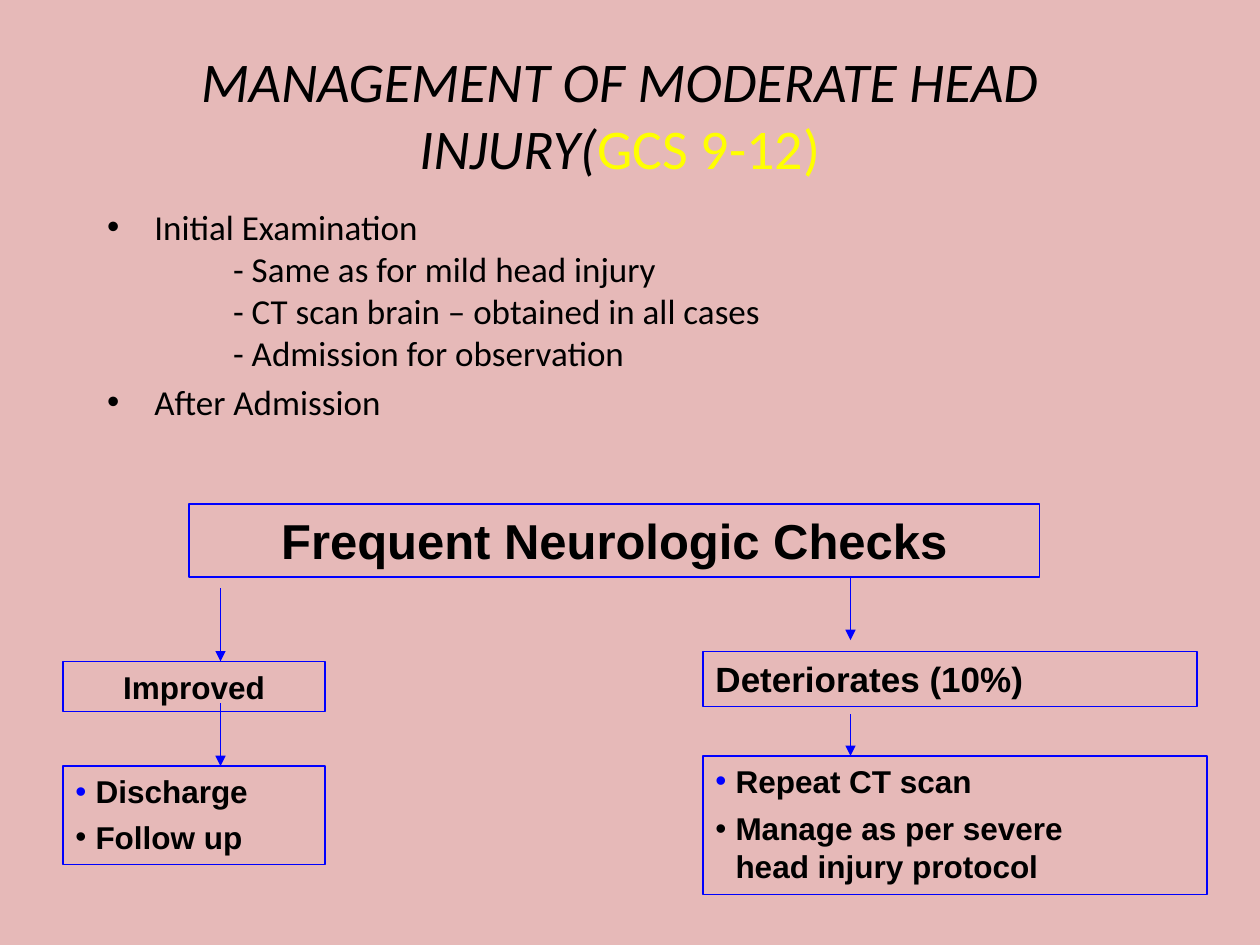
from dataclasses import dataclass

from lxml.etree import SubElement
from pptx import Presentation
from pptx.dml.color import RGBColor
from pptx.enum.shapes import MSO_CONNECTOR, MSO_SHAPE
from pptx.enum.text import MSO_ANCHOR, MSO_AUTO_SIZE, PP_ALIGN
from pptx.oxml.ns import qn
from pptx.util import Inches, Pt


@dataclass(frozen=True)
class Theme:
    back: str = "E6B9B8"
    ink: str = "000000"
    blue: str = "0000FF"
    gold: str = "FFFF00"
    head: str = "Calibri"
    chart: str = "Arial"
    title: int = 32
    body: int = 20
    large: int = 28
    label: int = 18
    rule: float = 0.75


THEME = Theme()


def paint(font, name, size, color=THEME.ink, bold=None, italic=None):
    font.name, font.size = name, Pt(size)
    font.bold, font.italic = bold, italic
    font.color.rgb = RGBColor.from_string(color)


def place(shape, left, top, width, height):
    shape.left, shape.top = Inches(left), Inches(top)
    shape.width, shape.height = Inches(width), Inches(height)


def stroke(line):
    line.color.rgb = RGBColor.from_string(THEME.blue)
    line.width = Pt(THEME.rule)


def add_title(slide):
    title = slide.shapes.title
    place(title, 0.67, -0.25, 8.5, 2.3)
    frame = title.text_frame
    frame.auto_size = MSO_AUTO_SIZE.NONE
    frame.vertical_anchor = MSO_ANCHOR.MIDDLE
    frame.text = "MANAGEMENT OF MODERATE HEAD INJURY("
    para = frame.paragraphs[0]
    para.alignment = PP_ALIGN.CENTER
    paint(para.runs[0].font, THEME.head, THEME.title, italic=True)
    score = para.add_run()
    score.text = "GCS 9-12)"
    paint(score.font, THEME.head, THEME.title, THEME.gold, italic=False)


def add_tab(para, stop):
    tabs = SubElement(para._p.get_or_add_pPr(), qn("a:tabLst"))
    SubElement(tabs, qn("a:tab"), pos=str(Inches(stop)), algn="l")


def add_body(slide):
    body = slide.placeholders[1]
    place(body, 0.75, 1.58, 8.5, 4.5)
    frame = body.text_frame
    frame.auto_size = MSO_AUTO_SIZE.NONE
    frame.text = (
        "Initial Examination\v\t- Same as for mild head injury"
        "\v\t- CT scan brain – obtained in all cases"
        "\v\t- Admission for observation\nAfter Admission"
    )
    for row, para in enumerate(frame.paragraphs):
        add_tab(para, 1)
        para.space_before = Pt(4 * row)
        for run in para.runs:
            paint(run.font, THEME.head, THEME.body)


def add_dot(para, color):
    props = para._p.get_or_add_pPr()
    hang = Inches(0.16)
    props.set("marL", str(hang))
    props.set("indent", str(-hang))
    tint = SubElement(props, qn("a:buClr"))
    SubElement(tint, qn("a:srgbClr"), val=color)
    SubElement(props, qn("a:buFont"), typeface=THEME.chart)
    SubElement(props, qn("a:buChar"), char="•")


def add_box(slide, area, text, size, align=PP_ALIGN.LEFT, gap=None):
    """Draw an outlined box; a gap in points makes its text a bullet list."""
    box = slide.shapes.add_shape(MSO_SHAPE.RECTANGLE, *map(Inches, area))
    box.shadow.inherit = False
    box.fill.background()
    stroke(box.line)
    frame = box.text_frame
    frame.word_wrap = True
    frame.vertical_anchor = MSO_ANCHOR.TOP
    frame.text = text
    for row, para in enumerate(frame.paragraphs):
        para.alignment = align
        if gap is not None:
            add_dot(para, THEME.ink if row else THEME.blue)
            para.space_before = Pt(gap * row)
        for run in para.runs:
            paint(run.font, THEME.chart, size, bold=True)


def add_arrow(slide, x, top, end):
    arrow = slide.shapes.add_connector(
        MSO_CONNECTOR.STRAIGHT, Inches(x), Inches(top), Inches(x), Inches(end)
    )
    stroke(arrow.line)
    SubElement(arrow.line._get_or_add_ln(), qn("a:tailEnd"), type="triangle")
    SubElement(arrow._element.spPr, qn("a:effectLst"))


def main():
    deck = Presentation()
    deck.slide_width, deck.slide_height = Inches(10), Inches(7.5)
    slide = deck.slides.add_slide(deck.slide_layouts[1])
    fill = slide.background.fill
    fill.solid()
    fill.fore_color.rgb = RGBColor.from_string(THEME.back)

    # Title and list
    add_title(slide)
    add_body(slide)

    # Flow chart boxes
    mid = PP_ALIGN.CENTER
    add_box(slide, (1.5, 4, 6.75, 0.58), "Frequent Neurologic Checks",
            THEME.large, mid)
    add_box(slide, (0.5, 5.25, 2.08, 0.4), "Improved", THEME.label, mid)
    add_box(slide, (5.58, 5.17, 3.92, 0.44), "Deteriorates (10%)", THEME.body)
    add_box(slide, (0.5, 6.08, 2.08, 0.78), "Discharge\nFollow up",
            THEME.label, gap=4.5)
    add_box(slide, (5.58, 6, 4, 1.1),
            "Repeat CT scan\nManage as per severe\vhead injury protocol",
            THEME.label, gap=5.4)

    # Arrows down each branch
    left, right = 1.75, 6.75
    for x, top, end in (
        (right, 4.58, 5.08),
        (right, 5.67, 6),
        (left, 4.67, 5.25),
        (left, 5.58, 6.08),
    ):
        add_arrow(slide, x, top, end)

    deck.save("out.pptx")


if __name__ == "__main__":
    main()
